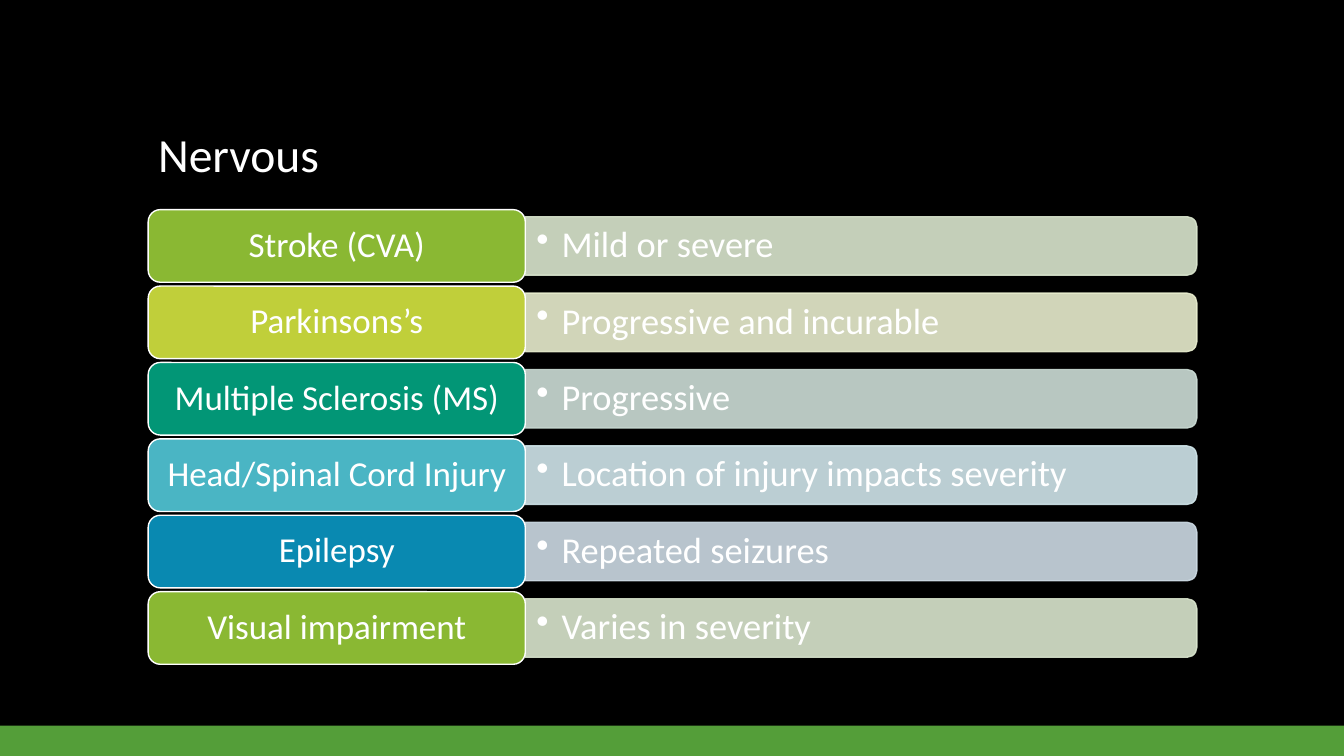
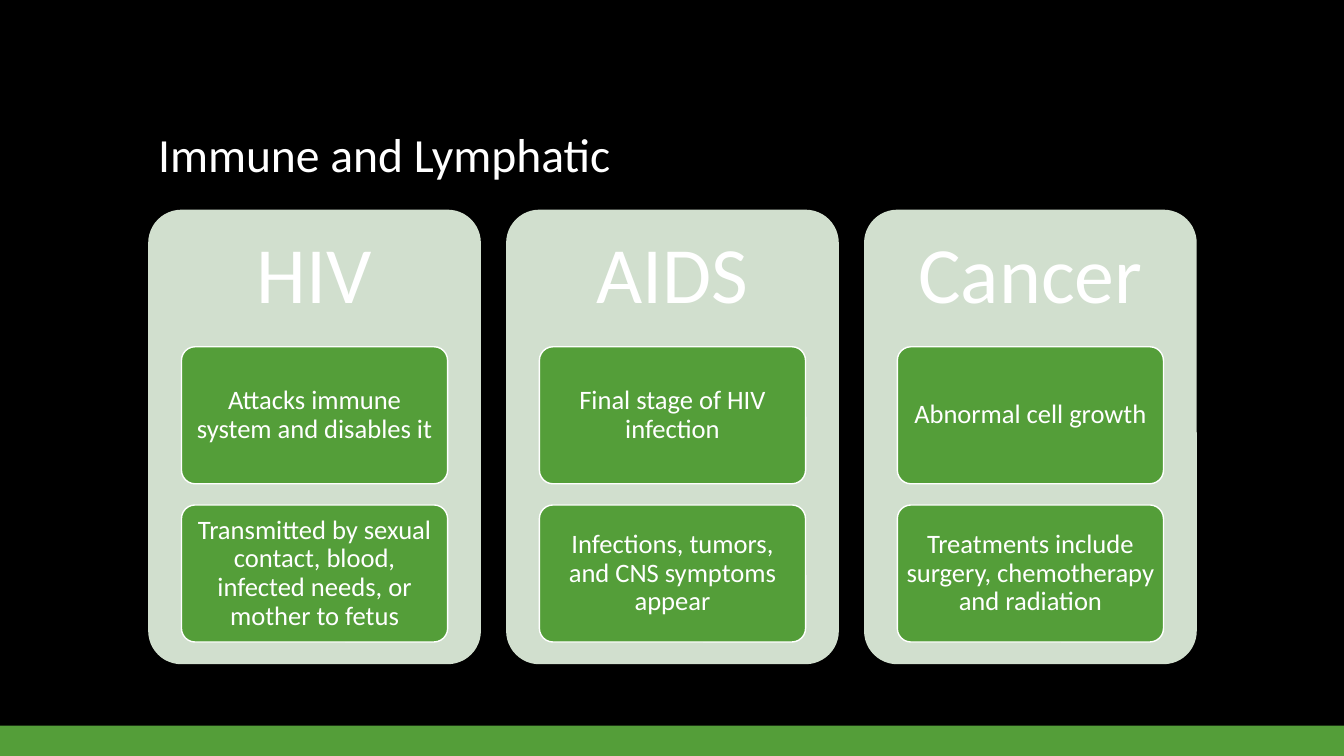
from lxml.etree import SubElement as Sub
from pptx import Presentation
from pptx.dml.color import RGBColor as Rgb
from pptx.enum.shapes import MSO_SHAPE as Shape
from pptx.enum.text import MSO_ANCHOR as Anchor, PP_ALIGN as Align
from pptx.oxml.ns import qn
from pptx.util import Inches, Pt

INK = {
    "back": "000000", "text": "FFFFFF", "main": "549E39", "panel": "D1DFCE",
    "green": "8AB833", "lime": "C0CF3A", "teal": "029676",
    "aqua": "4AB5C4", "blue": "0989B1",
}
TINT = {
    "green": "DAE6CE", "lime": "E8EDCE", "teal": "CCDDD6",
    "aqua": "D0E5EA", "blue": "CCDAE4",
}
FONT = "Calibri"
WIDE, HIGH = 13.33, 7.5
TITLE = (1.47, 0.51, 10.4, 1.35)
BODY = (1.47, 2.08, 10.4, 4.51)

ROWS = [
    ("Stroke (CVA)", "Mild or severe", "green"),
    ("Parkinsons’s", "Progressive and incurable", "lime"),
    ("Multiple Sclerosis (MS)", "Progressive", "teal"),
    ("Head/Spinal Cord Injury", "Location of injury impacts severity", "aqua"),
    ("Epilepsy", "Repeated seizures", "blue"),
    ("Visual impairment", "Varies in severity", "green"),
]
COLS = [
    ("HIV", ["Attacks immune system and disables it",
             "Transmitted by sexual contact, blood, infected needs, "
             "or mother to fetus"]),
    ("AIDS", ["Final stage of HIV infection",
              "Infections, tumors, and CNS symptoms appear"]),
    ("Cancer", ["Abnormal cell growth",
                "Treatments include surgery, chemotherapy and radiation"]),
]


def inch(box):
    return [Inches(n) for n in box]


def write(item, text, size, pad=(0.1, 0.05), align=Align.CENTER,
          anchor=Anchor.MIDDLE):
    """Put one paragraph into a shape or text box."""
    frame = item.text_frame
    frame.word_wrap = True
    frame.vertical_anchor = anchor
    frame.margin_left = frame.margin_right = Inches(pad[0])
    frame.margin_top = frame.margin_bottom = Inches(pad[1])
    para = frame.paragraphs[0]
    para.text = text
    para.alignment = align
    para.line_spacing = 0.9
    para.font.name = FONT
    para.font.size = Pt(size)
    para.font.color.rgb = Rgb.from_string(INK["text"])
    return para


def label(slide, box, *args, **opts):
    return write(slide.shapes.add_textbox(*inch(box)), *args, **opts)


def block(slide, kind, box, fill, line=None, round=None):
    item = slide.shapes.add_shape(kind, *inch(box))
    item.shadow.inherit = False
    item.fill.solid()
    item.fill.fore_color.rgb = Rgb.from_string(fill)
    if line:
        item.line.color.rgb = Rgb.from_string(line)
        item.line.width = Pt(1)
    else:
        item.line.fill.background()
    if round is not None:
        item.adjustments[0] = round
    return item


def fade(item, part):
    """Make every solid colour of a shape partly clear."""
    for tone in item.element.spPr.iter(qn("a:srgbClr")):
        Sub(tone, qn("a:alpha"), val=str(part * 1000))


def bullet(para, gap):
    props = para._p.get_or_add_pPr()
    props.set("marL", str(Inches(gap)))
    props.set("indent", str(-Inches(gap)))
    Sub(props, qn("a:buChar"), char="•")


def base(deck, title):
    """Start a slide with its background, bottom band and title."""
    slide = deck.slides.add_slide(deck.slide_layouts[6])
    back = slide.background.fill
    back.solid()
    back.fore_color.rgb = Rgb.from_string(INK["back"])
    block(slide, Shape.RECTANGLE, (0, HIGH - 0.3, WIDE, 0.3), INK["main"])
    label(slide, TITLE, title, 34, align=Align.LEFT, anchor=Anchor.BOTTOM)
    return slide


def row(slide, box, name, note, hue):
    """Coloured name on the left, pale bar with a bullet on the right."""
    left, top, wide, high = box
    head = 3.74
    start, span, thick = left + head, wide - head, 0.58
    mid = top + high / 2

    # The bar is a tall shape turned so its round end faces right
    bar = block(slide, Shape.ROUND_2_SAME_RECTANGLE,
                (start + (span - thick) / 2, mid - span / 2, thick, span),
                TINT[hue], TINT[hue])
    bar.rotation = 90
    fade(bar, 90)
    para = label(slide, (start, mid - 0.26, span - 0.03, 0.52), note, 26,
                 pad=(0.11, 0.05), align=Align.LEFT)
    bullet(para, 0.25)

    tag = block(slide, Shape.ROUNDED_RECTANGLE, (left, top, head, high),
                INK[hue], INK["text"])
    write(tag, name, 25)


def column(slide, box, name, notes):
    """Pale panel with a heading and stacked cards."""
    left, top, wide, high = box
    block(slide, Shape.ROUNDED_RECTANGLE, box, INK["panel"], round=0.1)
    label(slide, (left, top, wide, 0.3 * high), name, 57, pad=(0.24, 0.24))
    for i, note in enumerate(notes):
        card = block(slide, Shape.ROUNDED_RECTANGLE,
                     (left + 0.1 * wide, top + 1.36 + i * 1.57,
                      0.8 * wide, 1.36),
                     INK["main"], INK["text"], 0.1)
        write(card, note, 19, pad=(0.05, 0.04))


def rows(deck, title, data):
    slide = base(deck, title)
    left, top, wide, high = BODY
    tall = 0.72
    step = (high - tall) / (len(data) - 1)
    for i, item in enumerate(data):
        row(slide, (left, top + i * step, wide, tall), *item)


def columns(deck, title, data):
    slide = base(deck, title)
    left, top, wide, high = BODY
    span = 3.3
    step = (wide - span) / (len(data) - 1)
    for i, item in enumerate(data):
        column(slide, (left + i * step, top, span, high), *item)


def main():
    deck = Presentation()
    deck.slide_width, deck.slide_height = inch((WIDE, HIGH))
    rows(deck, "Nervous", ROWS)
    columns(deck, "Immune and Lymphatic", COLS)
    deck.save("out.pptx")


if __name__ == "__main__":
    main()
